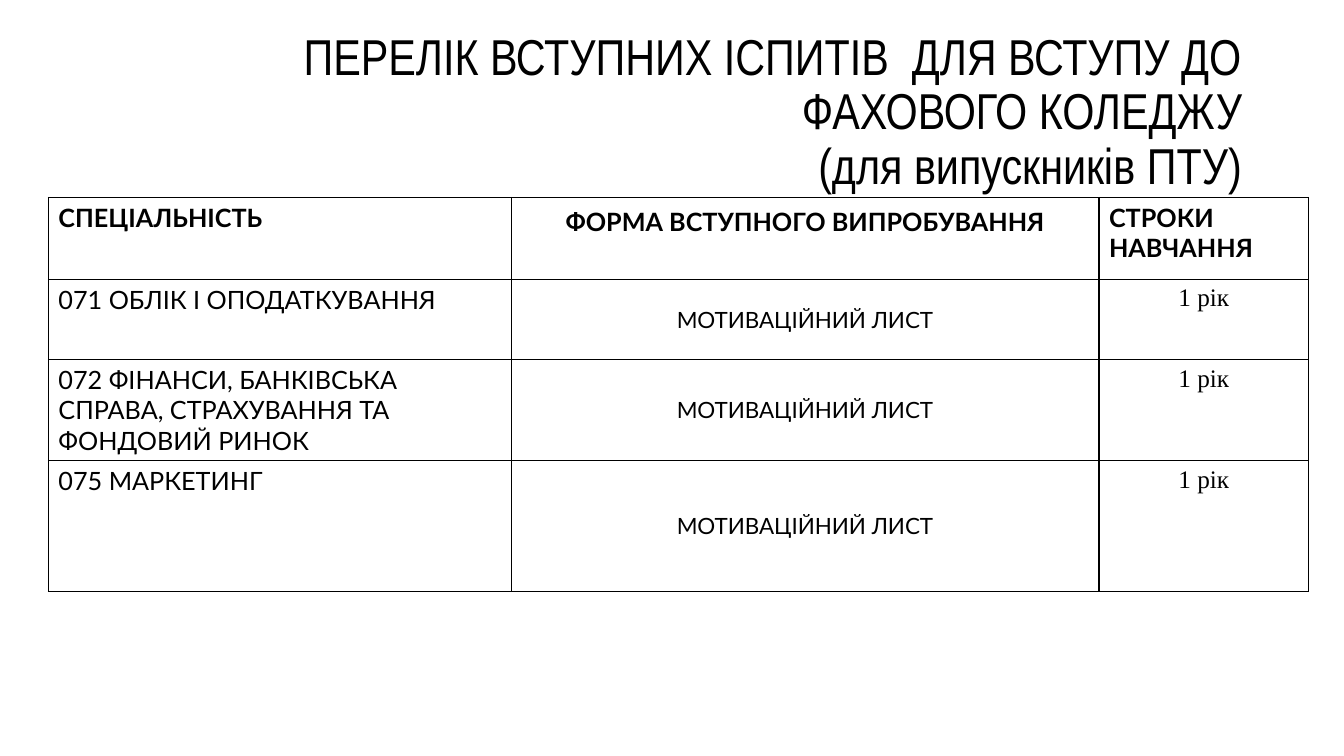
from lxml.etree import SubElement
from pptx import Presentation
from pptx.dml.color import RGBColor
from pptx.enum.text import MSO_ANCHOR as Anchor, MSO_AUTO_SIZE as AutoSize, PP_ALIGN as Align
from pptx.oxml.ns import qn
from pptx.util import Inches, Pt

BLACK, WHITE = "000000", "FFFFFF"


def add_text(paragraph, text, size, font_name, bold=False):
    run = paragraph.add_run()
    run.text = text
    run.font.size = Pt(size)
    run.font.name = font_name
    run.font.bold = bold
    run.font.color.rgb = RGBColor.from_string(BLACK)


def add_borders(cell):
    properties = cell._tc.get_or_add_tcPr()
    for position, side in enumerate(("a:lnL", "a:lnR", "a:lnT", "a:lnB")):
        line = SubElement(properties, qn(side), w=str(Pt(1)))
        fill = SubElement(line, qn("a:solidFill"))
        SubElement(fill, qn("a:srgbClr"), val=BLACK)
        properties.insert(position, line)


presentation = Presentation()
presentation.slide_width = Inches(13.33)
presentation.slide_height = Inches(7.5)
slide = presentation.slides.add_slide(presentation.slide_layouts[5])

# Title
title = slide.shapes.title
title.left, title.top = Inches(0.92), Inches(0.4)
title.width, title.height = Inches(11.5), Inches(1.45)
title_frame = title.text_frame
title_frame.word_wrap = True
title_frame.auto_size = AutoSize.NONE
title_frame.vertical_anchor = Anchor.MIDDLE
paragraph = title_frame.paragraphs[0]
paragraph.alignment = Align.RIGHT
paragraph.line_spacing = 0.9
add_text(paragraph, "ПЕРЕЛІК ВСТУПНИХ ІСПИТІВ  ДЛЯ ВСТУПУ ДО ФАХОВОГО КОЛЕДЖУ", 36, "Arial Narrow")
paragraph.add_line_break()
add_text(paragraph, "(для випускників ПТУ)", 36, "Arial Narrow")

# Table grid
headings = ["СПЕЦІАЛЬНІСТЬ", "ФОРМА ВСТУПНОГО ВИПРОБУВАННЯ", "СТРОКИ НАВЧАННЯ"]
specialities = [
    "071 ОБЛІК І ОПОДАТКУВАННЯ",
    "072 ФІНАНСИ, БАНКІВСЬКА СПРАВА, СТРАХУВАННЯ ТА ФОНДОВИЙ РИНОК",
    "075 МАРКЕТИНГ",
]
rows = [headings] + [[name, "МОТИВАЦІЙНИЙ ЛИСТ", "1 рік"] for name in specialities]
column_widths = [4.59, 5.83, 2.08]
row_heights = [0.81, 0.8, 1.0, 1.3]
table = slide.shapes.add_table(
    len(rows), len(headings), Inches(0.48), Inches(1.96),
    Inches(sum(column_widths)), Inches(sum(row_heights))).table
table.first_row = False
table.horz_banding = False
for column, width in zip(table.columns, column_widths):
    column.width = Inches(width)
for row, height in zip(table.rows, row_heights):
    row.height = Inches(height)

# Table cells: size, font and alignment for each column of the body
body_styles = [(18, "Lato", Align.LEFT), (16, "Lato", Align.CENTER),
               (18, "Times New Roman", Align.CENTER)]
for row_index, texts in enumerate(rows):
    for column_index, text in enumerate(texts):
        cell = table.cell(row_index, column_index)
        cell.fill.solid()
        cell.fill.fore_color.rgb = RGBColor.from_string(WHITE)
        add_borders(cell)
        paragraph = cell.text_frame.paragraphs[0]
        is_exam_column = column_index == 1
        if row_index == 0:
            paragraph.alignment = Align.CENTER if is_exam_column else Align.LEFT
            if is_exam_column:
                paragraph.line_spacing = 1.15
            add_text(paragraph, text, 18, "Lato", bold=True)
            continue
        size, font_name, paragraph.alignment = body_styles[column_index]
        if is_exam_column:
            cell.vertical_anchor = Anchor.MIDDLE
            cell.margin_left = cell.margin_right = Inches(0.03)
            cell.margin_top = cell.margin_bottom = 0
        add_text(paragraph, text, size, font_name)

presentation.save("out.pptx")
